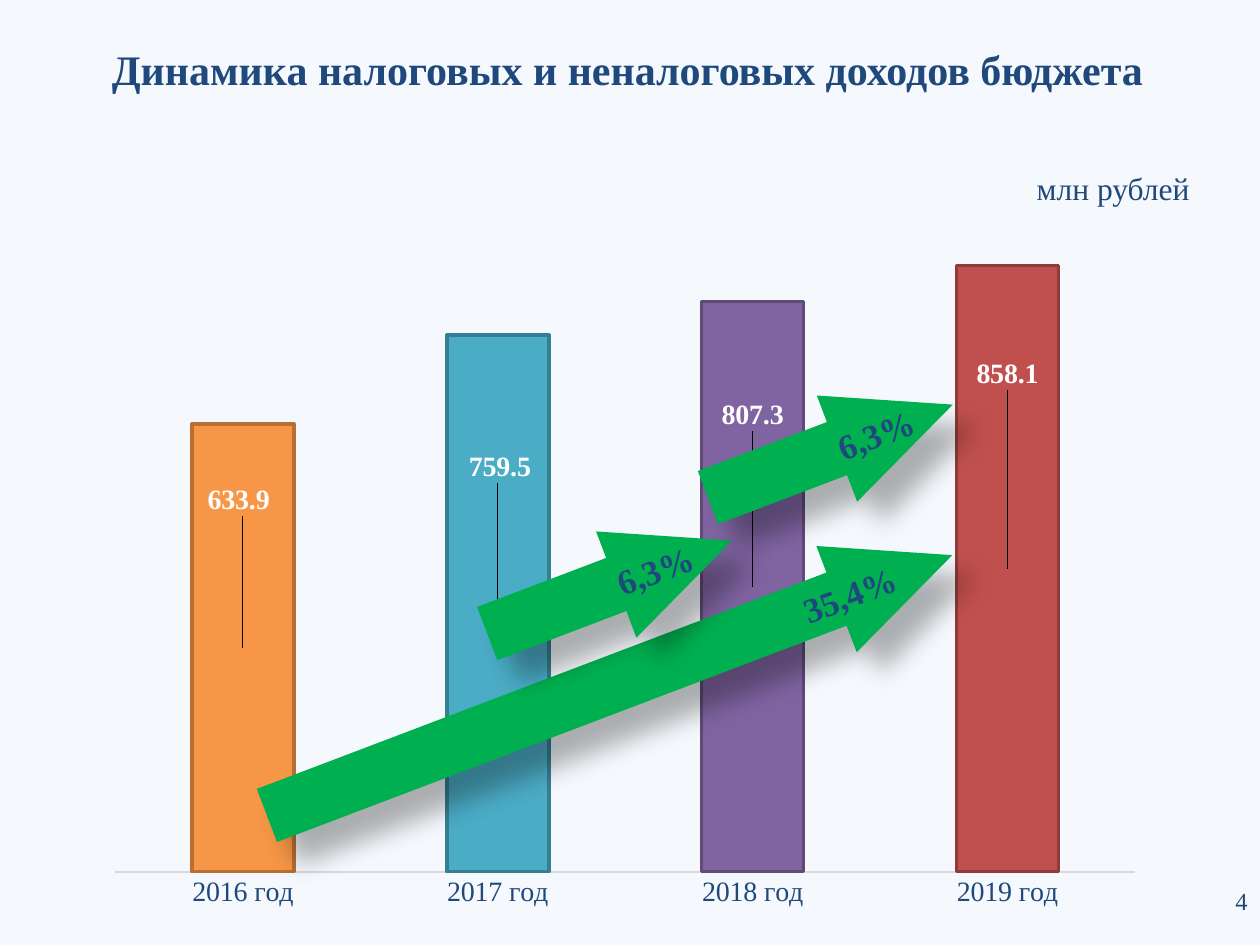
"""Build a slide charting tax and non-tax budget revenue with growth arrows."""
from dataclasses import dataclass

from lxml import etree
from pptx import Presentation
from pptx.chart.data import CategoryChartData
from pptx.dml.color import RGBColor
from pptx.enum import chart as ch, shapes, text
from pptx.oxml import parse_xml
from pptx.oxml.ns import nsdecls, qn
from pptx.util import Cm, Pt

FONT = "Times New Roman"
NAVY = RGBColor(0x1F, 0x49, 0x7D)
WHITE = RGBColor(0xFF, 0xFF, 0xFF)
GREEN = RGBColor(0x00, 0xB0, 0x50)
GREY = RGBColor(0xD9, 0xD9, 0xD9)
BACKGROUND = RGBColor(0xF5, 0xF8, 0xFC)


@dataclass
class Bar:
    year: int
    value: float
    fill: RGBColor
    line: RGBColor
    label_dx: float
    label_dy: float


@dataclass
class Arrow:
    label: str
    left: float
    top: float
    width: float
    margin_right: float


BARS = [
    Bar(2016, 633.9, RGBColor(0xF7, 0x96, 0x46), RGBColor(0xB7, 0x6F, 0x34), -0.004, -0.19),
    Bar(2017, 759.5, RGBColor(0x4B, 0xAC, 0xC6), RGBColor(0x35, 0x7F, 0x92), 0.002, -0.175),
    Bar(2018, 807.3, RGBColor(0x80, 0x64, 0xA2), RGBColor(0x5F, 0x4A, 0x78), 0, -0.22),
    Bar(2019, 858.1, RGBColor(0xC0, 0x50, 0x4D), RGBColor(0x8E, 0x3B, 0x39), 0, -0.25),
]
ARROWS = [
    Arrow("35,4%", 4.9, 12.67, 14.78, 0),
    Arrow("6,3%", 9.65, 10.69, 5.28, -0.38),
    Arrow("6,3%", 14.1, 7.95, 5.28, -0.38),
]


def style_font(font, size: int, color: RGBColor = NAVY, bold: bool = False) -> None:
    """Apply the slide's typeface to a font."""
    font.name = FONT
    font.size = Pt(size)
    font.bold = bold
    font.color.rgb = color


def write(sp, content: str, size: int, align, bold: bool = False):
    """Set a shape's single paragraph and return it."""
    tf = sp.text_frame
    tf.text = content
    p = tf.paragraphs[0]
    p.alignment = align
    style_font(p.runs[0].font, size, bold=bold)
    return p


def place(sp, left: float, top: float, width: float, height: float) -> None:
    """Position a shape in centimetres."""
    sp.left, sp.top, sp.width, sp.height = map(Cm, (left, top, width, height))


def manual_layout(target: str = "", **values: float):
    """Return a manual chart layout element."""
    layout = parse_xml(f'<c:layout {nsdecls("c")}><c:manualLayout/></c:layout>')
    settings = {"layoutTarget": target, "xMode": "edge", "yMode": "edge"} if target else {}
    for tag, value in {**settings, **values}.items():
        etree.SubElement(layout[0], qn(f"c:{tag}")).set("val", str(value))
    return layout


def add_revenue_chart(s) -> None:
    """Add the column chart with one coloured series per year."""
    data = CategoryChartData()
    data.categories = [f"{bar.year} год" for bar in BARS]
    for i, bar in enumerate(BARS):
        data.add_series(f"Series {i + 1}", [bar.value if j == i else None for j in range(len(BARS))])
    chart = s.shapes.add_chart(ch.XL_CHART_TYPE.COLUMN_STACKED, Cm(1.9), Cm(3.02),
                               Cm(21.41), Cm(15.65), data).chart
    chart.has_legend = False
    chart.has_title = False
    style_font(chart.font, 16)

    axis = chart.category_axis
    axis.major_tick_mark = ch.XL_TICK_MARK.NONE
    axis.format.line.color.rgb = GREY
    axis.format.line.width = Pt(1)
    style_font(axis.tick_labels.font, 16)
    scale = chart.value_axis
    scale.minimum_scale, scale.maximum_scale = 0, 1000
    scale.has_major_gridlines = False
    scale.visible = False

    plot = chart.plots[0]
    plot.gap_width, plot.overlap = 150, 100
    plot.vary_by_categories = False
    for i, (bar, series) in enumerate(zip(BARS, plot.series)):
        series.format.fill.solid()
        series.format.fill.fore_color.rgb = bar.fill
        series.format.line.color.rgb = bar.line
        series.format.line.width = Pt(2)
        style_font(series.points[i].data_label.font, 16, WHITE, True)
        label = series._element.find(".//" + qn("c:dLbl"))
        label.find(qn("c:idx")).addnext(manual_layout(x=bar.label_dx, y=bar.label_dy))

    area = chart._chartSpace.find(".//" + qn("c:plotArea"))
    for old in area.findall(qn("c:layout")):
        area.remove(old)
    area.insert(0, manual_layout("inner", x=0.02, y=0.02, w=0.96, h=0.91))


def add_arrow(s, arrow: Arrow) -> None:
    """Add a tilted growth arrow with a soft shadow."""
    sp = s.shapes.add_shape(shapes.MSO_SHAPE.RIGHT_ARROW, Cm(arrow.left), Cm(arrow.top),
                            Cm(arrow.width), Cm(2.29))
    sp.rotation = 339.2
    sp.adjustments[0], sp.adjustments[1] = 0.5, 1.09
    sp.fill.solid()
    sp.fill.fore_color.rgb = GREEN
    sp.line.fill.background()
    sp.shadow.inherit = False
    effects = sp._element.spPr.find(qn("a:effectLst"))
    effects.append(parse_xml(
        f'<a:outerShdw {nsdecls("a")} blurRad="{Pt(15)}" dist="{Pt(18)}" dir="2700000" '
        'algn="tl" rotWithShape="0"><a:srgbClr val="000000"><a:alpha val="30000"/>'
        '</a:srgbClr></a:outerShdw>'))
    write(sp, arrow.label, 20, text.PP_ALIGN.RIGHT, True)
    tf = sp.text_frame
    tf.word_wrap = True
    tf.vertical_anchor = text.MSO_ANCHOR.MIDDLE
    tf.margin_left, tf.margin_right = Cm(0.15), Cm(arrow.margin_right)


def main() -> None:
    """Assemble and save the slide."""
    prs = Presentation()
    prs.slide_width, prs.slide_height = Cm(25.4), Cm(19.05)
    s = prs.slides.add_slide(prs.slide_layouts[5])
    s.background.fill.solid()
    s.background.fill.fore_color.rgb = BACKGROUND

    title = s.shapes.title
    place(title, 0, 0.74, 25.3, 1.27)
    write(title, "Динамика налоговых и неналоговых доходов бюджета", 24, text.PP_ALIGN.CENTER, True)
    title.text_frame.vertical_anchor = text.MSO_ANCHOR.TOP

    unit = s.shapes.add_textbox(Cm(20.65), Cm(3.43), Cm(3.61), Cm(0.89))
    write(unit, "млн рублей", 18, text.PP_ALIGN.LEFT).line_spacing = 0.8
    number = s.shapes.add_textbox(Cm(19.48), Cm(17.65), Cm(5.92), Cm(1.02))
    write(number, "4", 14, text.PP_ALIGN.RIGHT)
    number.text_frame.word_wrap = True
    number.text_frame.vertical_anchor = text.MSO_ANCHOR.MIDDLE

    add_revenue_chart(s)
    for arrow in ARROWS:
        add_arrow(s, arrow)
    prs.save("out.pptx")


if __name__ == "__main__":
    main()
